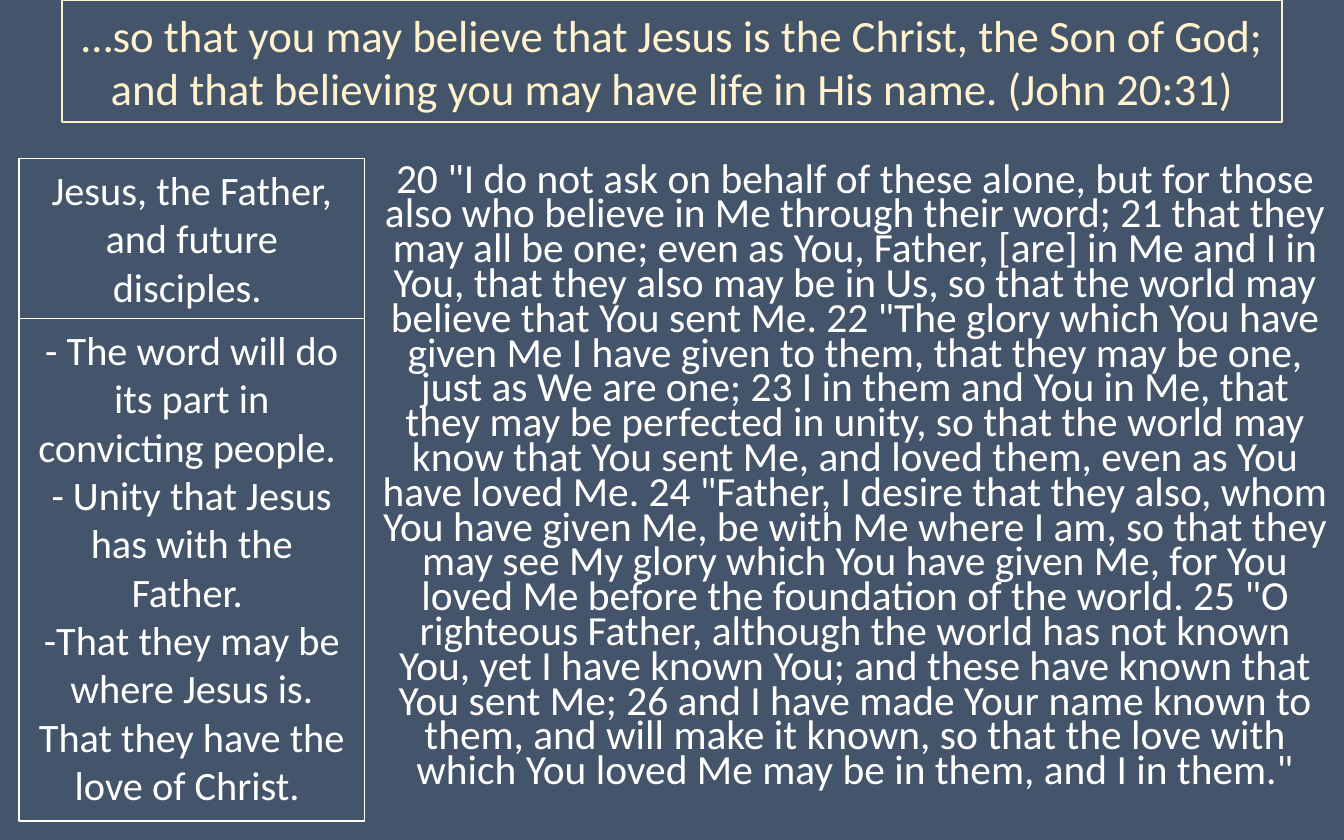
from pptx import Presentation
from pptx.dml.color import RGBColor
from pptx.enum.shapes import MSO_SHAPE
from pptx.enum.text import MSO_ANCHOR, PP_ALIGN
from pptx.util import Cm, Pt

RECT = MSO_SHAPE.RECTANGLE
TOP, MIDDLE = MSO_ANCHOR.TOP, MSO_ANCHOR.MIDDLE
CENTER = PP_ALIGN.CENTER

COLORS = {"background": "44546A", "cream": "FFF2CC", "white": "FFFFFF"}
FONT = "Calibri"

KEY_VERSE = (
    "…so that you may believe that Jesus is the Christ, the Son of God; "
    "and that believing you may have life in His name. (John 20:31)"
)
SUBJECT = ["Jesus, the Father, and future disciples. "]
POINTS = [
    "- The word will do its part in convicting people. ",
    "- Unity that Jesus has with the Father. ",
    "-That they may be where Jesus is.",
    "That they have the love of Christ. ",
]
VERSES = [
    '20 "I do not ask on behalf of these alone, but for those also who believe '
    "in Me through their word;",
    "21 that they may all be one; even as You, Father, [are] in Me and I in You, "
    "that they also may be in Us, so that the world may believe that You sent Me.",
    '22 "The glory which You have given Me I have given to them, that they may be '
    "one, just as We are one;",
    "23 I in them and You in Me, that they may be perfected in unity, so that the "
    "world may know that You sent Me, and loved them, even as You have loved Me.",
    '24 "Father, I desire that they also, whom You have given Me, be with Me where '
    "I am, so that they may see My glory which You have given Me, for You loved Me "
    "before the foundation of the world.",
    '25 "O righteous Father, although the world has not known You, yet I have known '
    "You; and these have known that You sent Me;",
    "26 and I have made Your name known to them, and will make it known, so that "
    'the love with which You loved Me may be in them, and I in them."',
]


def rgb(name):
    return RGBColor.from_string(COLORS[name])


def write(tf, lines, size, color, anchor=TOP):
    tf.word_wrap = True
    tf.vertical_anchor = anchor
    for i, line in enumerate(lines):
        p = tf.paragraphs[0] if i == 0 else tf.add_paragraph()
        p.alignment = CENTER
        r = p.add_run()
        r.text = line
        r.font.name = FONT
        r.font.size = Pt(size)
        r.font.color.rgb = rgb(color)


def framed_text(s, box, lines, size, color, anchor=TOP):
    sp = s.shapes.add_shape(RECT, *map(Cm, box))
    sp.shadow.inherit = False
    sp.fill.background()
    sp.line.color.rgb = rgb(color)
    sp.line.width = Pt(0.75)
    write(sp.text_frame, lines, size, color, anchor)


def passage(s, box):
    sp = s.shapes.add_textbox(*map(Cm, box))
    tf = sp.text_frame
    write(tf, [" ".join(VERSES)], 22.2, "white")
    p = tf.paragraphs[0]
    p.line_spacing = 0.7
    p.space_before = Pt(7.5)


def header(s, box):
    framed_text(s, box, [KEY_VERSE], 24, "cream", MIDDLE)


def sidebar(s, box, subject_height):
    x, y, w, h = box
    framed_text(s, (x, y, w, subject_height), SUBJECT, 21.6, "white")
    framed_text(s, (x, y + subject_height, w, h - subject_height),
                POINTS, 21.6, "white")


def main():
    prs = Presentation()
    prs.slide_width, prs.slide_height = Cm(25.4), Cm(15.88)
    s = prs.slides.add_slide(prs.slide_layouts[6])
    s.background.fill.solid()
    s.background.fill.fore_color.rgb = rgb("background")
    passage(s, (6.93, 3, 18.47, 12.88))
    header(s, (1.17, 0, 23.06, 2.31))
    sidebar(s, (0.36, 3, 6.53, 12.52), 3.02)
    prs.save("out.pptx")


if __name__ == "__main__":
    main()
